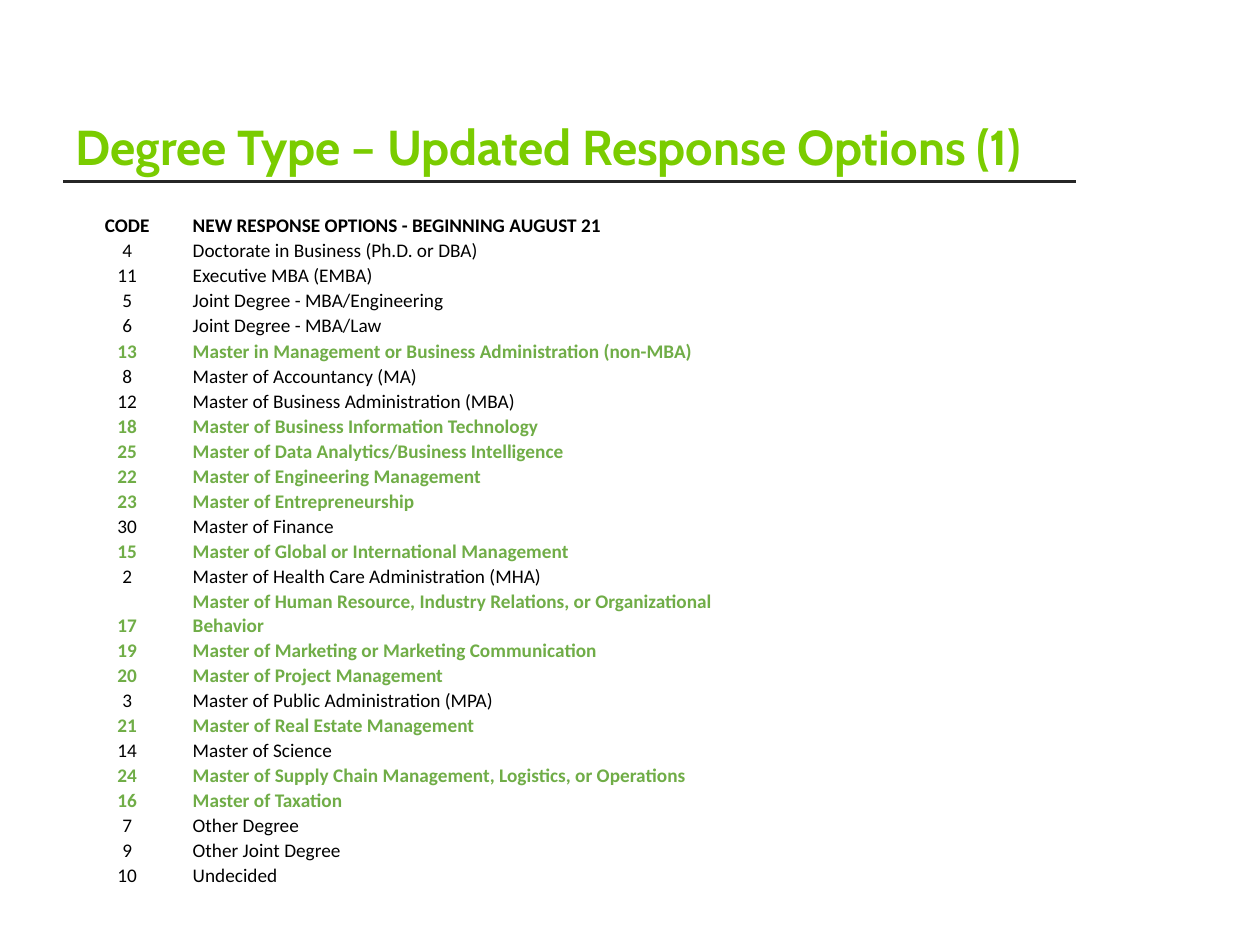
from pptx import Presentation
from pptx.dml.color import RGBColor
from pptx.enum.shapes import MSO_CONNECTOR
from pptx.enum.text import MSO_ANCHOR, MSO_AUTO_SIZE, PP_ALIGN
from pptx.oxml.ns import qn
from pptx.util import Inches, Pt
from lxml import etree

STRAIGHT = MSO_CONNECTOR.STRAIGHT
BOTTOM = MSO_ANCHOR.BOTTOM
NO_AUTOFIT = MSO_AUTO_SIZE.NONE
LEFT, CENTER = PP_ALIGN.LEFT, PP_ALIGN.CENTER

COLORS = {"title": "7ACC00", "rule": "262626", "current": "000000", "new": "70AD47"}
TITLE_ONLY = 5
ROW_HEIGHT = 0.19
CODE_WIDTH, OPTION_WIDTH = 1.02, 4.73

HEADINGS = ("CODE", "NEW RESPONSE OPTIONS - BEGINNING AUGUST 21")
# Code, degree, whether the option is newly added
DEGREES = [
    (4, "Doctorate in Business (Ph.D. or DBA)", False),
    (11, "Executive MBA (EMBA)", False),
    (5, "Joint Degree - MBA/Engineering", False),
    (6, "Joint Degree - MBA/Law", False),
    (13, "Master in Management or Business Administration (non-MBA)", True),
    (8, "Master of Accountancy (MA)", False),
    (12, "Master of Business Administration (MBA)", False),
    (18, "Master of Business Information Technology", True),
    (25, "Master of Data Analytics/Business Intelligence", True),
    (22, "Master of Engineering Management", True),
    (23, "Master of Entrepreneurship", True),
    (30, "Master of Finance", False),
    (15, "Master of Global or International Management", True),
    (2, "Master of Health Care Administration (MHA)", False),
    (17, "Master of Human Resource, Industry Relations, or Organizational Behavior", True),
    (19, "Master of Marketing or Marketing Communication", True),
    (20, "Master of Project Management", True),
    (3, "Master of Public Administration (MPA)", False),
    (21, "Master of Real Estate Management", True),
    (14, "Master of Science", False),
    (24, "Master of Supply Chain Management, Logistics, or Operations", True),
    (16, "Master of Taxation", True),
    (7, "Other Degree", False),
    (9, "Other Joint Degree", False),
    (10, "Undecided", False),
]


def apply_format(target, values):
    for name, value in values.items():
        setattr(target, name, value)


class SlideBuilder:
    title_font = {"name": "Cabin", "size": Pt(28), "bold": True}
    table_font = {"name": "Calibri", "size": Pt(11)}
    cell_format = {
        "vertical_anchor": BOTTOM,
        "margin_left": Inches(0.01),
        "margin_right": Inches(0.01),
        "margin_top": Inches(0.01),
        "margin_bottom": 0,
    }

    def __init__(self, slide):
        self.slide = slide

    def style_text(self, paragraph, text, font, color, **paragraph_format):
        paragraph.text = text
        apply_format(paragraph, paragraph_format)
        apply_format(paragraph.font, font)
        paragraph.font.color.rgb = RGBColor.from_string(COLORS[color])

    def title(self, text, left, top, width, height):
        heading = self.slide.shapes.title
        apply_format(heading, {"left": Inches(left), "top": Inches(top),
                               "width": Inches(width), "height": Inches(height)})
        apply_format(heading.text_frame, {"vertical_anchor": BOTTOM, "word_wrap": True,
                                          "auto_size": NO_AUTOFIT})
        self.style_text(heading.text_frame.paragraphs[0], text, self.title_font, "title",
                        alignment=LEFT, line_spacing=Pt(36))

    def rule(self, left, right, y):
        rule = self.slide.shapes.add_connector(
            STRAIGHT, Inches(left), Inches(y), Inches(right), Inches(y))
        rule.line.color.rgb = RGBColor.from_string(COLORS["rule"])
        rule.line.width = Pt(1.5)
        etree.SubElement(rule._element.spPr, qn("a:effectLst"))

    def table(self, rows, left, top, widths):
        """Each row holds its two texts, a colour name and a bold flag."""
        table = self.slide.shapes.add_table(
            len(rows), len(widths), Inches(left), Inches(top),
            Inches(sum(widths)), Inches(ROW_HEIGHT * len(rows))).table
        apply_format(table, {"first_row": False, "horz_banding": False})
        for column, width in zip(table.columns, widths):
            column.width = Inches(width)
        for row, (code, option, color, bold) in zip(table.rows, rows):
            row.height = Inches(ROW_HEIGHT)
            for cell, text, alignment in zip(row.cells, (code, option), (CENTER, LEFT)):
                cell.fill.background()
                apply_format(cell, self.cell_format)
                self.style_text(cell.text_frame.paragraphs[0], text,
                                {**self.table_font, "bold": bold}, color,
                                alignment=alignment)


def main():
    deck = Presentation()
    apply_format(deck, {"slide_width": Inches(10), "slide_height": Inches(7.5)})
    builder = SlideBuilder(deck.slides.add_slide(deck.slide_layouts[TITLE_ONLY]))

    # Title with the rule below it
    builder.rule(0.5, 8.54, 1.44)
    builder.title("Degree Type – Updated Response Options (1)", 0.5, 0.35, 8.04, 1.09)

    # Response options, new ones in bold green
    rows = [(*HEADINGS, "current", True)]
    rows += [(str(code), degree, "new" if is_new else "current", is_new)
             for code, degree, is_new in DEGREES]
    builder.table(rows, 0.5, 1.69, (CODE_WIDTH, OPTION_WIDTH))

    deck.save("out.pptx")


if __name__ == "__main__":
    main()
